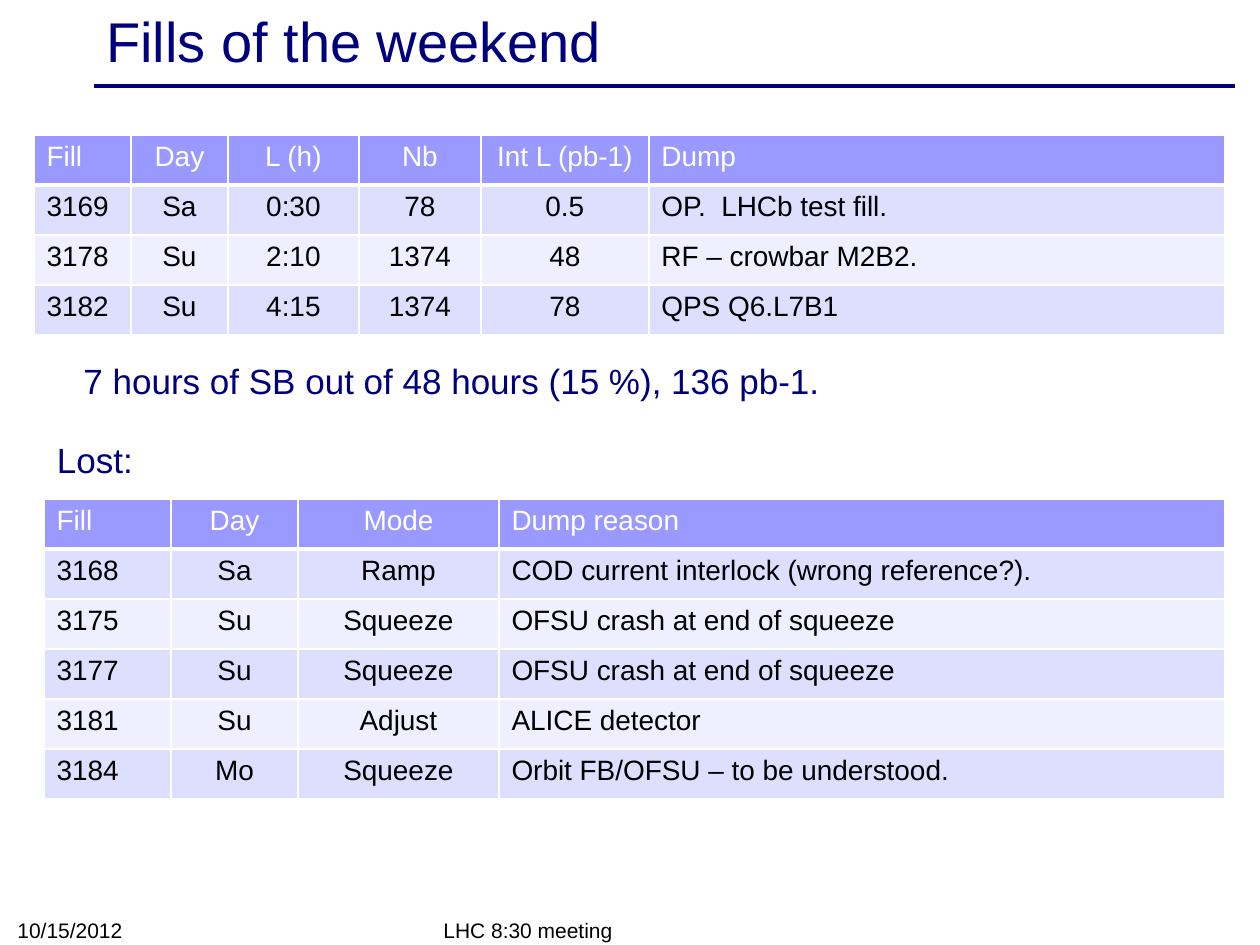
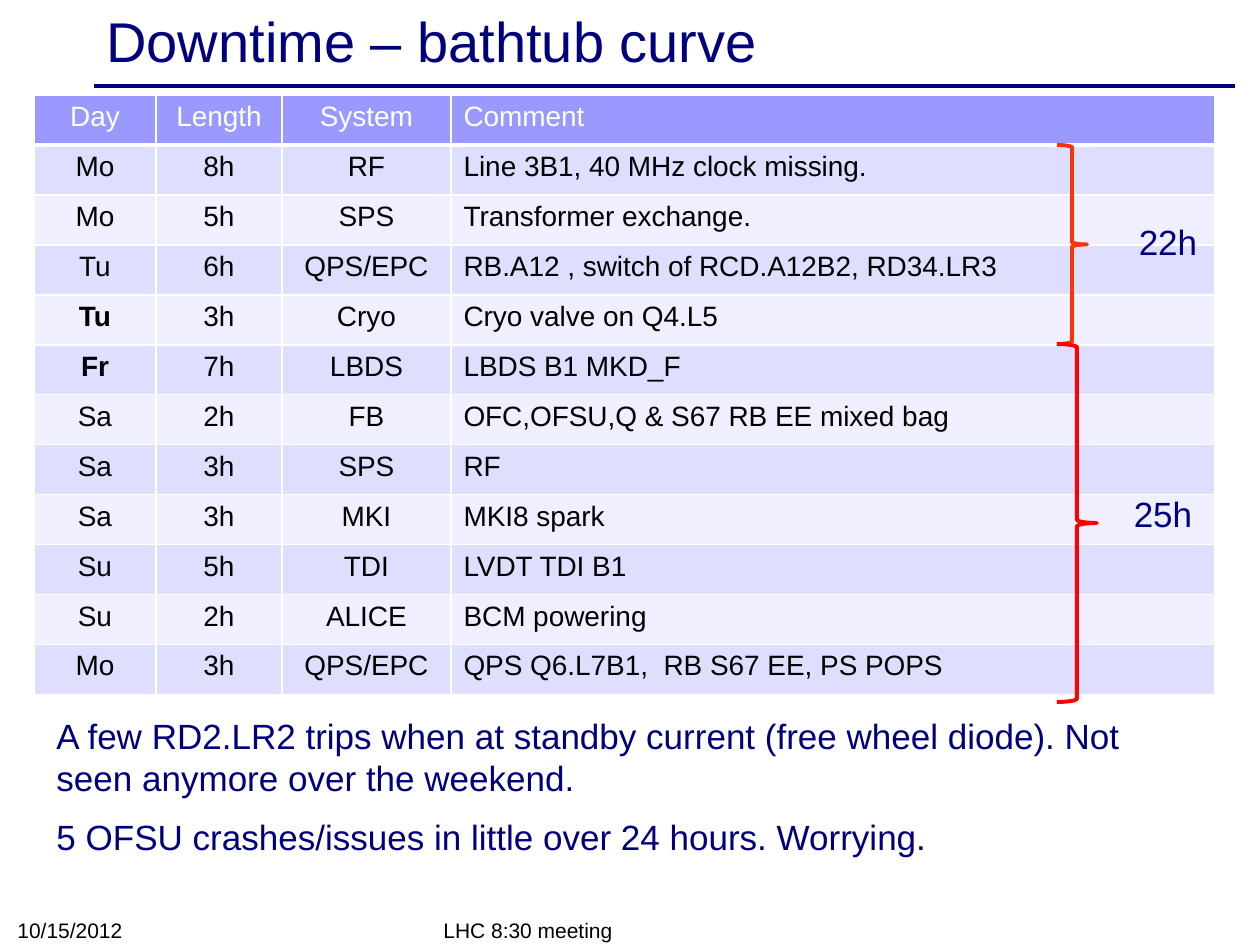
from lxml import etree
from pptx import Presentation, util as u
from pptx.dml.color import RGBColor
from pptx.enum import shapes, text
from pptx.oxml.ns import qn

PX = 914400 / 126
FONT = "Arial"
COLORS = {"navy": "00007D", "header": "9999FF", "odd": "DEDEFF", "even": "EFEFFF",
          "white": "FFFFFF", "black": "000000", "orange": "FF3300", "red": "FF0000"}
COLORS = {name: RGBColor.from_string(value) for name, value in COLORS.items()}
LEFT, CENTER = text.PP_ALIGN.LEFT, text.PP_ALIGN.CENTER
ROW_HEIGHT = 50


def add_text(slide, box, lines, size, color="navy", align=LEFT,
             anchor=text.MSO_ANCHOR.TOP, wrap=True):
    frame = slide.shapes.add_textbox(*[round(v * PX) for v in box]).text_frame
    frame.word_wrap = wrap
    frame.vertical_anchor = anchor
    frame.text = "\n".join(lines)
    for i, paragraph in enumerate(frame.paragraphs):
        paragraph.alignment = align
        if i:
            paragraph.space_before = u.Pt(size / 2)
        for run in paragraph.runs:
            run.font.size, run.font.name = u.Pt(size), FONT
            run.font.color.rgb = COLORS[color]


def add_grid(slide, left, top, widths, rows, left_columns, bold_cells=()):
    """Table with a header row, alternating bands and white rules."""
    grid = slide.shapes.add_table(
        len(rows), len(widths), round(left * PX), round(top * PX),
        round(sum(widths) * PX), round(len(rows) * ROW_HEIGHT * PX)).table
    for column, width in zip(grid.columns, widths):
        column.width = round(width * PX)
    for r, row in enumerate(rows):
        grid.rows[r].height = round(ROW_HEIGHT * PX)
        band = "header" if r == 0 else "odd" if r % 2 else "even"
        for c, value in enumerate(row):
            cell = grid.cell(r, c)
            cell.fill.solid()
            cell.fill.fore_color.rgb = COLORS[band]
            cell.text_frame.text = value
            paragraph = cell.text_frame.paragraphs[0]
            paragraph.alignment = LEFT if c in left_columns else CENTER
            font = paragraph.runs[0].font
            font.size, font.name = u.Pt(16), FONT
            font.bold = (r, c) in bold_cells
            font.color.rgb = COLORS["black" if r else "white"]
            # White rules, thicker below the header
            for i, side in enumerate("LRTB"):
                thick = (r, side) in ((0, "B"), (1, "T"))
                rule = etree.Element(qn("a:ln" + side), w=str(u.Pt(3 if thick else 1)))
                solid = etree.SubElement(rule, qn("a:solidFill"))
                etree.SubElement(solid, qn("a:srgbClr"), val=str(COLORS["white"]))
                cell._tc.get_or_add_tcPr().insert(i, rule)


deck = Presentation()
deck.slide_width, deck.slide_height = round(1260 * PX), round(945 * PX)

# Title, rule and footers shared by both slides
pages = []
for title in ("Fills of the weekend", "Downtime – bathtub curve"):
    slide = deck.slides.add_slide(deck.slide_layouts[6])
    pages.append(slide)
    rule = slide.shapes.add_connector(
        shapes.MSO_CONNECTOR.STRAIGHT, *[round(v * PX) for v in (94, 86, 1235, 86)])
    rule.line.color.rgb, rule.line.width = COLORS["navy"], u.Pt(2)
    etree.SubElement(rule._element.spPr, qn("a:effectLst"))
    add_text(slide, (94, 4, 1134, 72), [title], 32, anchor=text.MSO_ANCHOR.MIDDLE)
    for box, footer in (((431, 914, 399, 35), "LHC 8:30 meeting"),
                        ((5, 912, 294, 37), "10/15/2012")):
        add_text(slide, box, [footer], 12, "black", anchor=text.MSO_ANCHOR.BOTTOM)
fills, downtime = pages

# Slide 1: fills in stable beams
add_grid(fills, 34, 135, (97, 97, 131, 122, 168, 576), [
    ("Fill", "Day", "L (h)", "Nb", "Int L (pb-1)", "Dump"),
    ("3169", "Sa", "0:30", "78", "0.5", "OP.  LHCb test fill."),
    ("3178", "Su", "2:10", "1374", "48", "RF – crowbar M2B2."),
    ("3182", "Su", "4:15", "1374", "78", "QPS Q6.L7B1"),
], left_columns=(0, 5))
add_text(fills, (71, 353, 776, 55),
         ["7 hours of SB out of 48 hours (15 %), 136 pb-1."], 20, wrap=False)

# Slide 1: lost fills
add_text(fills, (44, 432, 102, 55), ["Lost:"], 20, align=CENTER, wrap=False)
add_grid(fills, 44, 499, (127, 127, 201, 726), [
    ("Fill", "Day", "Mode", "Dump reason"),
    ("3168", "Sa", "Ramp", "COD current interlock (wrong reference?)."),
    ("3175", "Su", "Squeeze", "OFSU crash at end of squeeze"),
    ("3177", "Su", "Squeeze", "OFSU crash at end of squeeze"),
    ("3181", "Su", "Adjust", "ALICE detector"),
    ("3184", "Mo", "Squeeze", "Orbit FB/OFSU – to be understood."),
], left_columns=(0, 3))

# Slide 2: downtime by system
add_grid(downtime, 34, 95, (122, 126, 169, 764), [
    ("Day", "Length", "System", "Comment"),
    ("Mo", "8h", "RF", "Line 3B1, 40 MHz clock missing."),
    ("Mo", "5h", "SPS", "Transformer exchange."),
    ("Tu", "6h", "QPS/EPC", "RB.A12 , switch of RCD.A12B2, RD34.LR3"),
    ("Tu", "3h", "Cryo", "Cryo valve on Q4.L5"),
    ("Fr", "7h", "LBDS", "LBDS B1 MKD_F"),
    ("Sa", "2h", "FB", "OFC,OFSU,Q & S67 RB EE mixed bag"),
    ("Sa", "3h", "SPS", "RF"),
    ("Sa", "3h", "MKI", "MKI8 spark"),
    ("Su", "5h", "TDI", "LVDT TDI B1"),
    ("Su", "2h", "ALICE", "BCM powering"),
    ("Mo", "3h", "QPS/EPC", "QPS Q6.L7B1,  RB S67 EE, PS POPS"),
], left_columns=(3,), bold_cells=((4, 0), (5, 0)))

# Slide 2: remarks
add_text(downtime, (44, 708, 1101, 161), [
    "A few RD2.LR2 trips when at standby current (free wheel diode). "
    "Not seen anymore over the weekend.",
    "5 OFSU crashes/issues in little over 24 hours. Worrying."], 20)

# Slide 2: braces with total hours
for span, color, total, label in (
        ((1057, 145, 30, 199), "orange", "22h", (1126, 214, 84, 55)),
        ((1057, 344, 40, 358), "red", "25h", (1121, 486, 84, 55))):
    brace = downtime.shapes.add_shape(
        shapes.MSO_SHAPE.RIGHT_BRACE, *[round(v * PX) for v in span])
    brace.shadow.inherit = False
    brace.fill.background()
    brace.line.color.rgb, brace.line.width = COLORS[color], u.Pt(2.25)
    add_text(downtime, label, [total], 20, align=CENTER, wrap=False)

deck.save("out.pptx")
